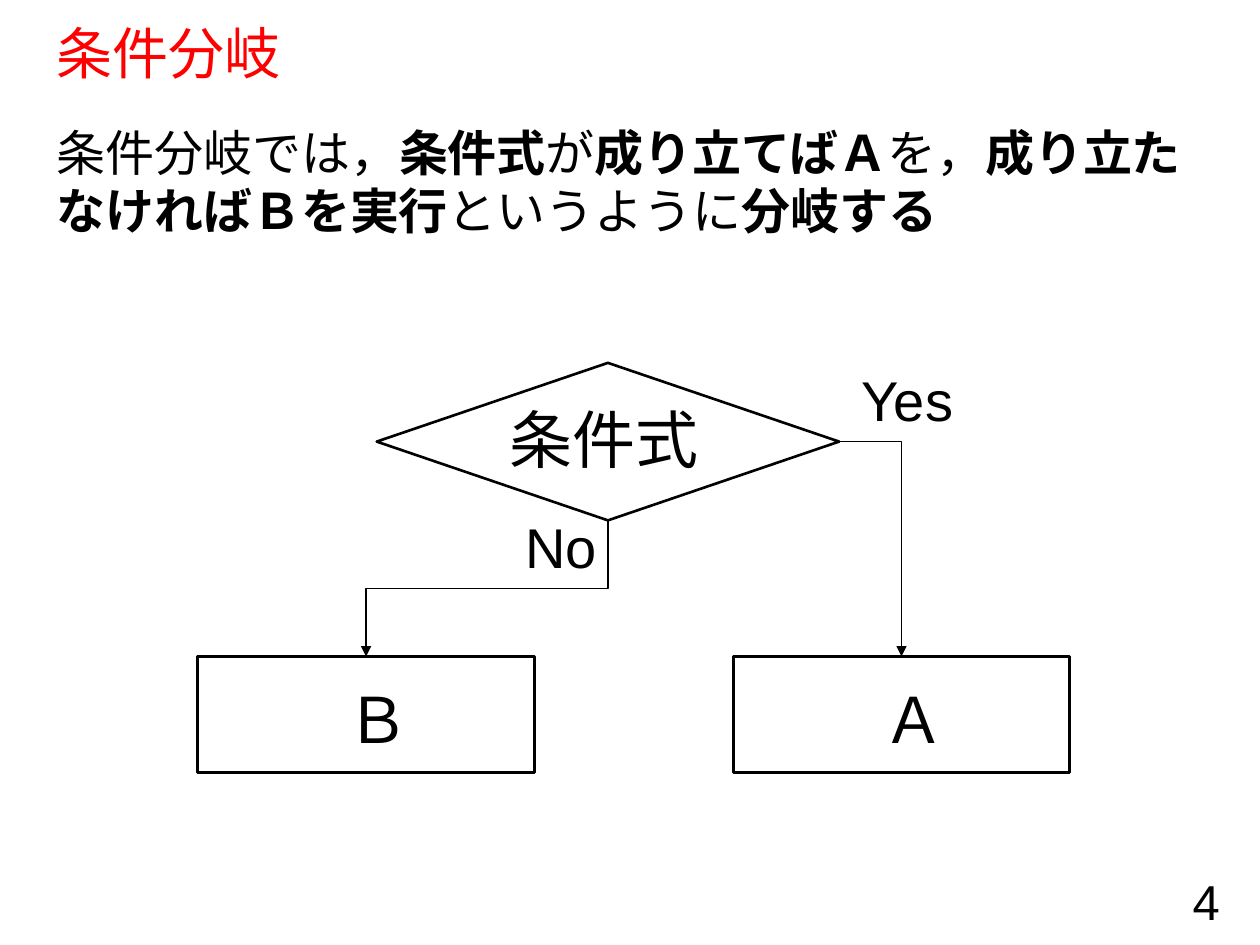
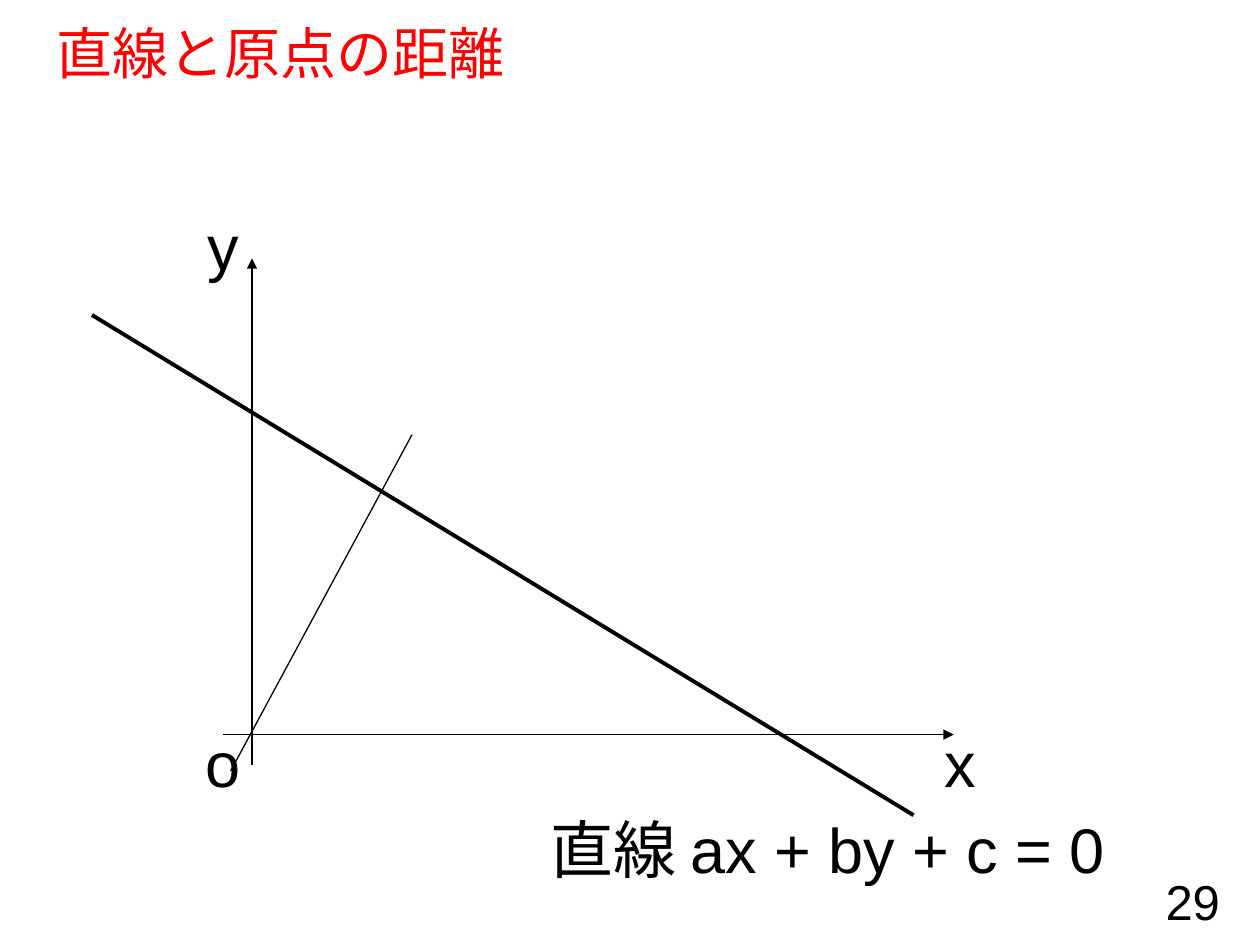
from pptx import Presentation
from pptx.dml.color import RGBColor
from pptx.enum.lang import MSO_LANGUAGE_ID
from pptx.enum.shapes import MSO_CONNECTOR, MSO_SHAPE
from pptx.enum.text import MSO_ANCHOR, PP_ALIGN
from pptx.oxml.ns import qn
from pptx.util import Inches, Pt
from lxml.etree import SubElement

COLORS = {"title": "FF0000", "ink": "000000"}
SLIDE_WIDTH, SLIDE_HEIGHT = Inches(10), Inches(7.5)
CELL = SLIDE_WIDTH // 100  # square grid: 100 columns by 75 rows

MARGIN, CONTENT_WIDTH = 3.5, 92.5
LABEL_SIZE, BRANCH_SIZE = 36, 32
THIN, OUTLINE, THICK = 0.75, 1.5, 2.25


def cells(*counts):
    return [round(count * CELL) for count in counts]


def add_text(slide, box, runs, size, color="ink", wrap=True,
             anchor=MSO_ANCHOR.TOP, align=PP_ALIGN.LEFT, spacing=1.0):
    """Place one paragraph; runs is a list of (text, bold) pairs or a string."""
    frame = slide.shapes.add_textbox(*cells(*box)).text_frame
    frame.word_wrap = wrap
    frame.vertical_anchor = anchor
    paragraph = frame.paragraphs[0]
    paragraph.alignment = align
    paragraph.line_spacing = spacing
    for text, bold in [(runs, False)] if isinstance(runs, str) else runs:
        run = paragraph.add_run()
        run.text = text
        font_format = {"name": "Arial", "size": Pt(size), "bold": bold,
                       "language_id": MSO_LANGUAGE_ID.JAPANESE}
        for attribute, value in font_format.items():
            setattr(run.font, attribute, value)
        run.font.color.rgb = RGBColor.from_string(COLORS[color])


def add_label(slide, box, text, size=LABEL_SIZE):
    add_text(slide, box, text, size, wrap=False)


def set_line(line, width):
    line.color.rgb = RGBColor.from_string(COLORS["ink"])
    line.width = Pt(width)


def add_flow_symbol(slide, symbol, box):
    shape = slide.shapes.add_shape(symbol, *cells(*box))
    shape.shadow.inherit = False
    shape.fill.background()
    set_line(shape.line, OUTLINE)


def add_line(slide, start, end, width=THIN, arrow=False,
             kind=MSO_CONNECTOR.STRAIGHT):
    connector = slide.shapes.add_connector(kind, *cells(*start, *end))
    set_line(connector.line, width)
    properties = connector._element.spPr
    if arrow:
        SubElement(properties.find(qn("a:ln")), qn("a:tailEnd"), type="triangle")
    SubElement(properties, qn("a:effectLst"))
    return properties


def add_corner_arrow(slide, start, end):
    """Go across, then down."""
    properties = add_line(slide, start, end, arrow=True, kind=MSO_CONNECTOR.ELBOW)
    properties.find(qn("a:prstGeom")).set("prst", "bentConnector2")


def add_step_arrow(slide, start, end):
    """Go down, left at half height, and down: an elbow turned a quarter."""
    (x1, y1), (x2, y2) = start, end
    middle_x, middle_y = (x1 + x2) / 2, (y1 + y2) / 2
    half_drop, half_run = (y2 - y1) / 2, (x1 - x2) / 2
    properties = add_line(slide, (middle_x - half_drop, middle_y - half_run),
                          (middle_x + half_drop, middle_y + half_run),
                          arrow=True, kind=MSO_CONNECTOR.ELBOW)
    properties.find(qn("a:xfrm")).set("rot", str(90 * 60000))


def add_titled_slide(deck, title, number):
    slide = deck.slides.add_slide(deck.slide_layouts[6])
    add_text(slide, (MARGIN, 1.9, CONTENT_WIDTH, 5.1), title, 32, "title",
             anchor=MSO_ANCHOR.MIDDLE, spacing=0.9)
    add_text(slide, (75.3, 69.5, 22.5, 4), str(number), 28,
             anchor=MSO_ANCHOR.MIDDLE, align=PP_ALIGN.RIGHT)
    return slide


def build_branching(deck):
    slide = add_titled_slide(deck, "条件分岐", 4)
    add_text(slide, (MARGIN, 9.2, CONTENT_WIDTH, 58.3), [
        ("条件分岐では，", False), ("条件式", True), ("が", False),
        ("成り立てばＡ", True), ("を，", False),
        ("成り立たなければＢを実行", True), ("というように", False),
        ("分岐する", True)], 28)

    left, top, width, height = decision = (29.9, 28.8, 36.7, 12.5)
    add_flow_symbol(slide, MSO_SHAPE.FLOWCHART_DECISION, decision)

    process_top, process_width = 52.1, 26.7
    no_center, yes_center = 29.05, 71.55
    for name, center in (("Ｂ", no_center), ("Ａ", yes_center)):
        add_flow_symbol(slide, MSO_SHAPE.FLOWCHART_PROCESS,
                        (center - process_width / 2, process_top, process_width, 9.2))
        add_label(slide, (center - 2.5, 53.5, 7.1, 7.1), name)

    add_step_arrow(slide, (left + width / 2, top + height), (no_center, process_top))
    add_corner_arrow(slide, (left + width, top + height / 2), (yes_center, process_top))
    add_label(slide, (67.4, 28.5, 9.3, 6.4), "Yes", BRANCH_SIZE)
    add_label(slide, (40.7, 40.2, 7.8, 6.4), "No", BRANCH_SIZE)
    add_text(slide, (39.2, 31.3, 17.4, 7), "条件式", LABEL_SIZE, align=PP_ALIGN.CENTER)


def build_distance(deck):
    slide = add_titled_slide(deck, "直線と原点の距離", 29)
    origin_x, origin_y = 20, 58.3
    add_line(slide, (7.3, 25), (72.5, 64.7), THICK)
    add_text(slide, (42.7, 63.8, 50, 7.1), "直線 ax + by + c = 0", LABEL_SIZE)
    add_line(slide, (17.7, origin_y), (75.7, origin_y), arrow=True)
    add_line(slide, (origin_x, 60.7), (origin_x, 20.5), arrow=True)
    add_label(slide, (15.3, 57, 4.8, 7.1), "o")
    add_label(slide, (74, 57, 4.5, 7), "x")
    add_label(slide, (15.5, 16, 4.5, 7), "y")
    add_line(slide, (32.7, 34.5), (18.3, 61.2))


def main():
    deck = Presentation()
    deck.slide_width, deck.slide_height = SLIDE_WIDTH, SLIDE_HEIGHT
    build_branching(deck)
    build_distance(deck)
    deck.save("out.pptx")


if __name__ == "__main__":
    main()
